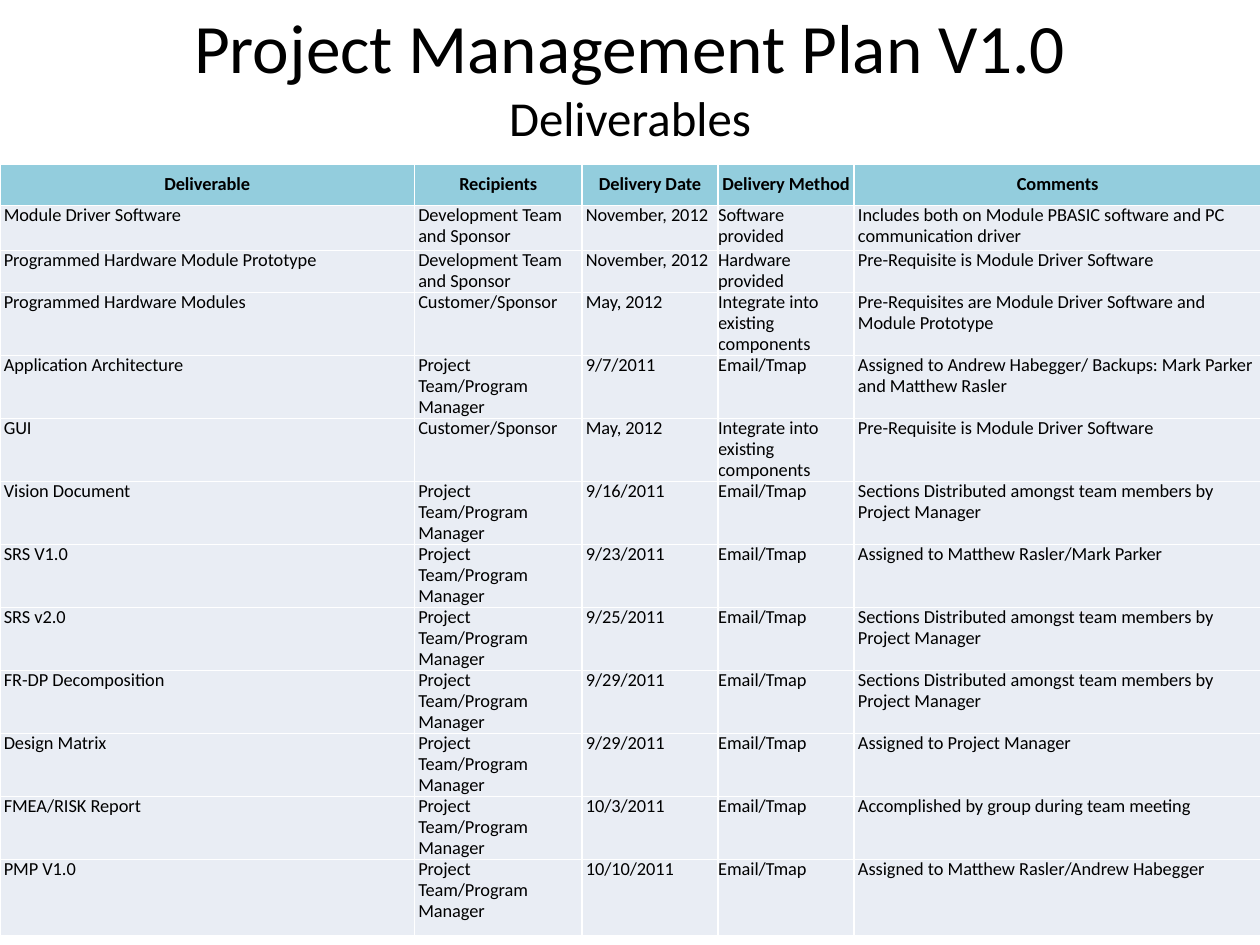
"""Build the deliverables slide of a project management plan."""
from lxml.etree import SubElement
from pptx import Presentation
from pptx.dml.color import RGBColor
from pptx.enum.text import MSO_ANCHOR, PP_ALIGN
from pptx.oxml.ns import qn
from pptx.util import Inches, Pt

COLORS = {"text": "000000", "header": "93CDDD", "body": "E9EDF4", "border": "FFFFFF"}
TEAM = "Project Team/Program Manager"
DEVELOPERS = "Development Team and Sponsor"
CUSTOMER = "Customer/Sponsor"
EMAIL = "Email/Tmap"
INTEGRATE = "Integrate into existing components"
AFTER_DRIVER = "Pre-Requisite is Module Driver Software"
SECTIONS = "Sections Distributed amongst team members by Project Manager"

DELIVERABLES = [
    ("Deliverable", "Recipients", "Delivery Date", "Delivery Method", "Comments"),
    ("Module Driver Software", DEVELOPERS, "November, 2012", "Software provided",
     "Includes both on Module PBASIC software and PC communication driver"),
    ("Programmed Hardware Module Prototype", DEVELOPERS, "November, 2012",
     "Hardware provided", AFTER_DRIVER),
    ("Programmed Hardware Modules", CUSTOMER, "May, 2012", INTEGRATE,
     "Pre-Requisites are Module Driver Software and Module Prototype"),
    ("Application Architecture", TEAM, "9/7/2011", EMAIL,
     "Assigned to Andrew Habegger/ Backups: Mark Parker and Matthew Rasler"),
    ("GUI", CUSTOMER, "May, 2012", INTEGRATE, AFTER_DRIVER),
    ("Vision Document", TEAM, "9/16/2011", EMAIL, SECTIONS),
    ("SRS V1.0", TEAM, "9/23/2011", EMAIL, "Assigned to Matthew Rasler/Mark Parker"),
    ("SRS v2.0", TEAM, "9/25/2011", EMAIL, SECTIONS),
    ("FR-DP Decomposition", TEAM, "9/29/2011", EMAIL, SECTIONS),
    ("Design Matrix", TEAM, "9/29/2011", EMAIL, "Assigned to Project Manager"),
    ("FMEA/RISK Report", TEAM, "10/3/2011", EMAIL,
     "Accomplished by group during team meeting"),
    ("PMP V1.0", TEAM, "10/10/2011", EMAIL,
     "Assigned to Matthew Rasler/Andrew Habegger"),
]
COLUMN_WIDTHS = [3.29, 1.33, 1.08, 1.08, 3.23]
ROW_HEIGHTS = [0.33, 0.36, 0.33] + [0.5] * 9 + [0.6]
METHOD_COLUMN = 3


def set_font(font, size, bold=False):
    font.name = "Calibri"
    font.size = Pt(size)
    font.bold = bold
    font.color.rgb = RGBColor.from_string(COLORS["text"])


def add_borders(cell):
    properties = cell._tc.get_or_add_tcPr()
    for position, side in enumerate(("lnL", "lnR", "lnT", "lnB")):
        line = properties.makeelement(qn(f"a:{side}"), {"w": str(Pt(1))})
        fill = SubElement(line, qn("a:solidFill"))
        SubElement(fill, qn("a:srgbClr"), val=COLORS["border"])
        properties.insert(position, line)


prs = Presentation()
prs.slide_width = Inches(10)
prs.slide_height = Inches(7.5)
slide = prs.slides.add_slide(prs.slide_layouts[6])

deliverables = slide.shapes.add_table(
    len(DELIVERABLES), len(COLUMN_WIDTHS),
    Inches(0), Inches(1.3), Inches(10), Inches(6.12)).table
for column, width in zip(deliverables.columns, COLUMN_WIDTHS):
    column.width = Inches(width)
for row, height in zip(deliverables.rows, ROW_HEIGHTS):
    row.height = Inches(height)

for row_index, entries in enumerate(DELIVERABLES):
    is_header = row_index == 0
    for column_index, entry in enumerate(entries):
        cell = deliverables.cell(row_index, column_index)
        cell.text = entry
        side_margin = Inches(0 if column_index == METHOD_COLUMN else 0.03)
        cell.margin_left = cell.margin_right = side_margin
        cell.margin_top = cell.margin_bottom = Inches(0)
        cell.vertical_anchor = MSO_ANCHOR.MIDDLE if is_header else MSO_ANCHOR.TOP
        cell.fill.solid()
        cell.fill.fore_color.rgb = RGBColor.from_string(
            COLORS["header" if is_header else "body"])
        add_borders(cell)
        paragraph = cell.text_frame.paragraphs[0]
        paragraph.alignment = PP_ALIGN.CENTER if is_header else PP_ALIGN.LEFT
        paragraph.line_spacing = Pt(12)
        paragraph.space_before = paragraph.space_after = Pt(3 if is_header else 1)
        set_font(paragraph.font, 10.5, is_header)

title = slide.shapes.add_textbox(
    Inches(0.5), Inches(0.08), Inches(9), Inches(1.03)).text_frame
title.word_wrap = True
title.vertical_anchor = MSO_ANCHOR.MIDDLE
heading = title.paragraphs[0]
heading.alignment = PP_ALIGN.CENTER
plan = heading.add_run()
plan.text = "Project Management Plan V1.0"
set_font(plan.font, 39.6)
heading.add_line_break()
subject = heading.add_run()
subject.text = "Deliverables"
set_font(subject.font, 27.9)

prs.save("out.pptx")
